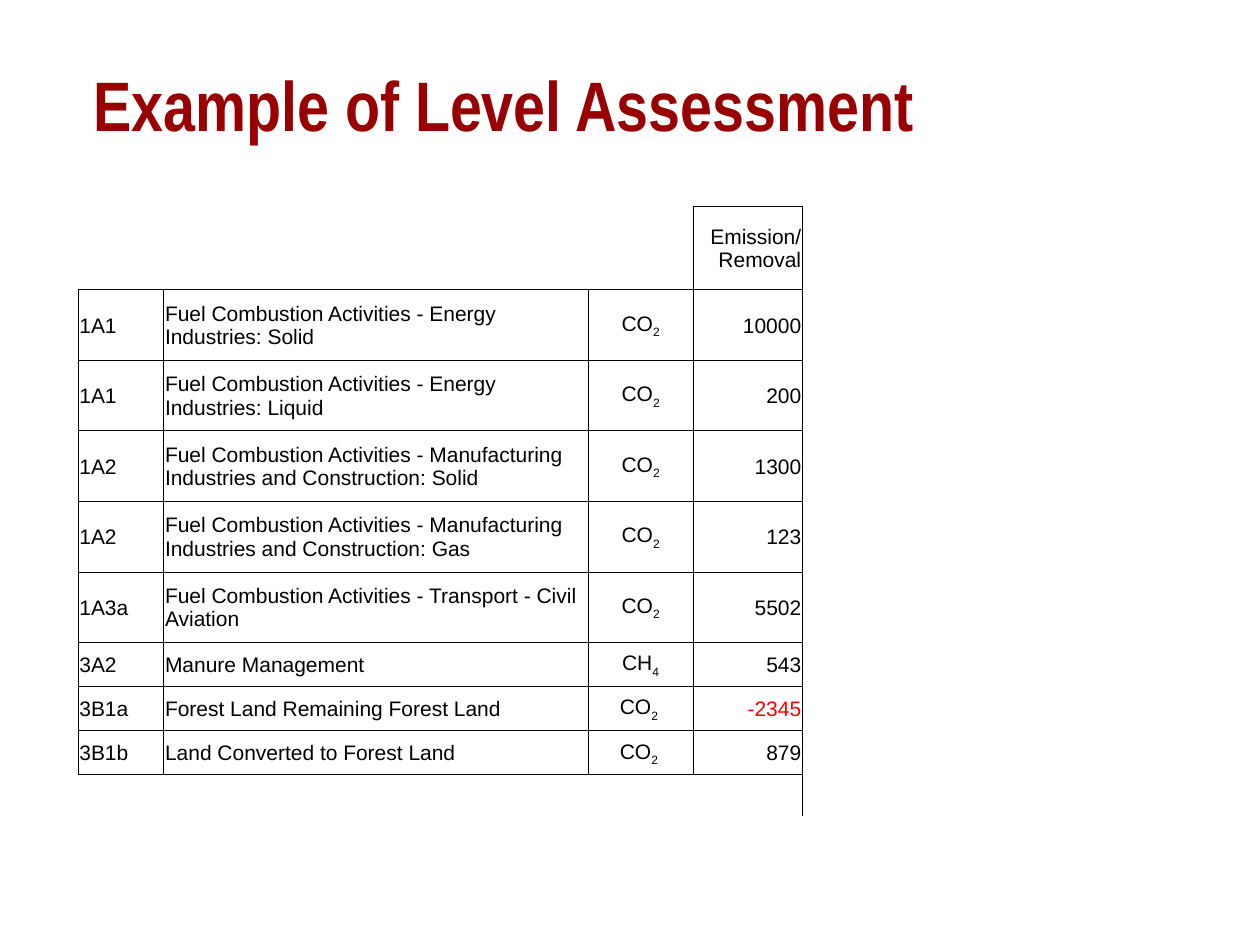
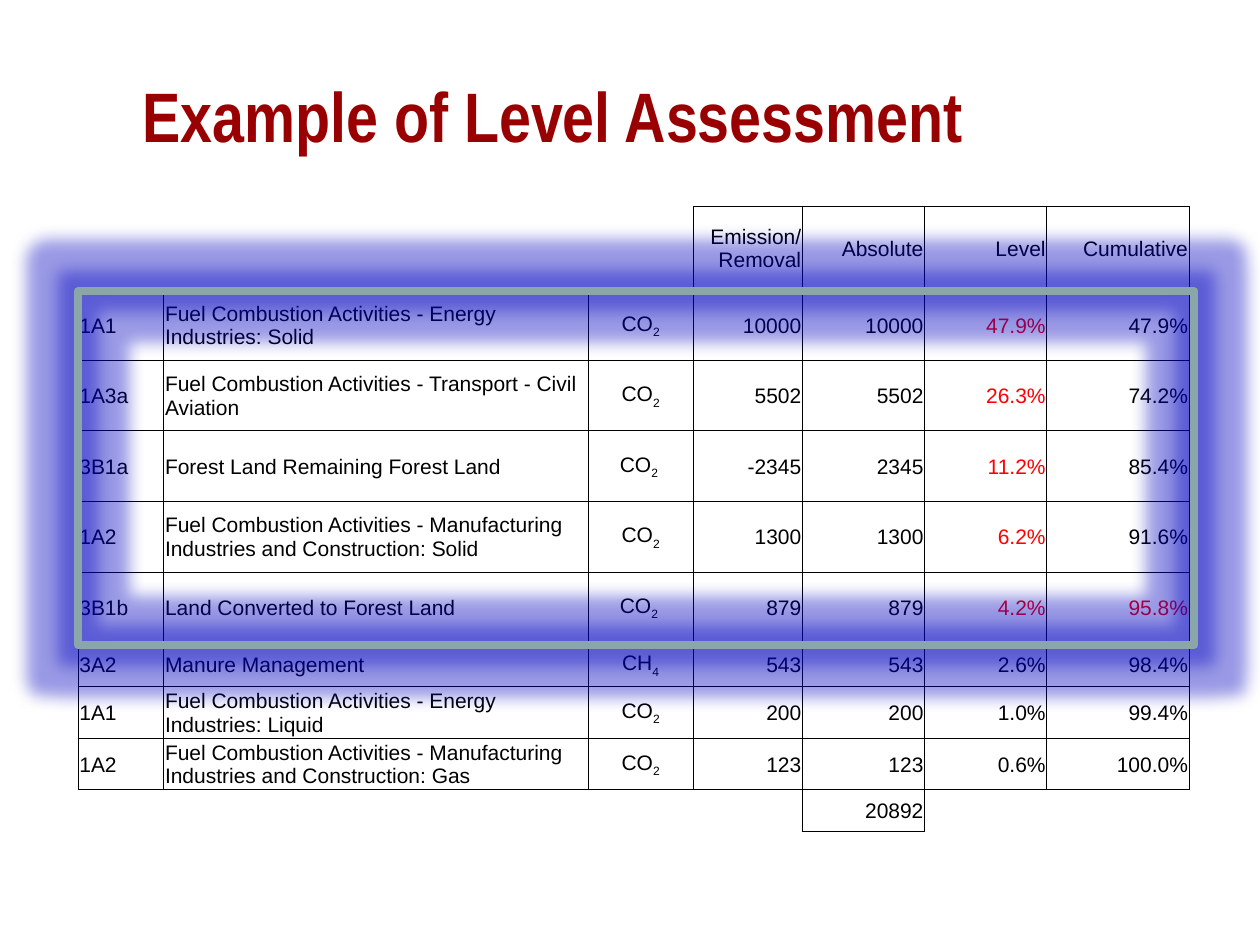
from itertools import accumulate

from lxml import etree
from pptx import Presentation
from pptx.dml.color import RGBColor
from pptx.enum.shapes import MSO_SHAPE
from pptx.enum.text import MSO_ANCHOR, MSO_AUTO_SIZE, PP_ALIGN
from pptx.oxml.ns import qn
from pptx.util import Inches, Pt

LEFT, CENTER, RIGHT = PP_ALIGN.LEFT, PP_ALIGN.CENTER, PP_ALIGN.RIGHT
MIDDLE = MSO_ANCHOR.MIDDLE
NO_AUTOFIT = MSO_AUTO_SIZE.NONE
RECTANGLE = MSO_SHAPE.RECTANGLE

# Colours and fonts
DARK_RED = RGBColor(0x99, 0x00, 0x02)
RED = RGBColor(0xFF, 0x00, 0x00)
BLACK = RGBColor(0x00, 0x00, 0x00)
FRAME_GREY = RGBColor(0x8A, 0xA6, 0xA8)
GLOW_BLUE = RGBColor(0x00, 0x00, 0xC0)
TITLE_FONT, TABLE_FONT = "Arial Narrow", "Arial"

# Table grid, in inches
TABLE_LEFT, TABLE_TOP = 0.62, 1.64
COLUMN_WIDTHS = [0.68, 3.37, 0.83, 0.87, 0.97, 0.97, 1.13]
COLUMN_ALIGNS = [LEFT, LEFT, CENTER] + [RIGHT] * 4
HEADER_HEIGHT, TALL_ROW, SHORT_ROW, WRAPPED_ROW, FOOTER_HEIGHT = 0.66, 0.56, 0.35, 0.41, 0.33
TALL_COUNT = 5
NO_STYLE = "{2D5ABB26-0587-4C30-8999-92F81FD0307C}"

# Content
TITLE = "Example of Level Assessment"
HEADINGS = ["", "", "", "Emission/ Removal", "Absolute", "Level", "Cumulative"]
KEY_THRESHOLD = 95
FUEL = "Fuel Combustion Activities - "
CO2, CO2_SPACED, CH4 = ("CO", "2"), ("CO", "2 "), ("CH", "4")
CATEGORIES = [
    ("1A1", FUEL + "Energy Industries: Solid", CO2, 10000),
    ("1A1", FUEL + "Energy Industries: Liquid", CO2, 200),
    ("1A2", FUEL + "Manufacturing Industries and Construction: Solid", CO2, 1300),
    ("1A2", FUEL + "Manufacturing Industries and Construction: Gas", CO2, 123),
    ("1A3a", FUEL + "Transport - Civil Aviation", CO2, 5502),
    ("3A2", "Manure Management", CH4, 543),
    ("3B1a", "Forest Land Remaining Forest Land", CO2_SPACED, -2345),
    ("3B1b", "Land Converted to Forest Land", CO2_SPACED, 879),
]


def write_text(frame, text, subscript="", font=TABLE_FONT, size=12, color=BLACK,
               bold=False, align=LEFT):
    """Fill the first paragraph, with an optional subscript at its end."""
    paragraph = frame.paragraphs[0]
    paragraph.alignment = align
    paragraph.font.size = Pt(size)
    for part, baseline in ((text, None), (subscript, "-25000")):
        if not part:
            continue
        run = paragraph.add_run()
        run.text = part
        run.font.name, run.font.size, run.font.bold = font, Pt(size), bold
        run.font.color.rgb = color
        if baseline:
            run.font._element.set("baseline", baseline)


def add_titled_slide(deck, left, top):
    slide = deck.slides.add_slide(deck.slide_layouts.get_by_name("Title Only"))
    title = slide.shapes.title
    title.left, title.top = Inches(left), Inches(top)
    title.width, title.height = Inches(8.66), Inches(1.1)
    title.text_frame.auto_size = NO_AUTOFIT
    title.text_frame.vertical_anchor = MIDDLE
    write_text(title.text_frame, TITLE, font=TITLE_FONT, size=40, color=DARK_RED, bold=True)
    return slide


def set_borders(cell, sides):
    """Draw thin lines on the given sides and none on the others."""
    properties = cell._tc.get_or_add_tcPr()
    for side in "LRTB":
        line = etree.SubElement(properties, qn(f"a:ln{side}"), w=str(Pt(0.5)))
        if side in sides:
            fill = etree.SubElement(line, qn("a:solidFill"))
            etree.SubElement(fill, qn("a:srgbClr"), val=str(BLACK))
        else:
            etree.SubElement(line, qn("a:noFill"))


def border_sides(rows, row, column):
    """A filled cell is boxed; an empty one shares its neighbours' lines."""
    if rows[row][column]:
        return "LRTB"
    neighbours = {"L": (row, column - 1), "R": (row, column + 1),
                  "T": (row - 1, column), "B": (row + 1, column)}
    return "".join(side for side, (r, c) in neighbours.items()
                   if 0 <= r < len(rows) and 0 <= c < len(rows[0]) and rows[r][c])


def add_level_table(slide, rows, heights, red_cells, extra_borders):
    widths = COLUMN_WIDTHS[:len(rows[0])]
    holder = slide.shapes.add_table(len(rows), len(widths), Inches(TABLE_LEFT), Inches(TABLE_TOP),
                                    Inches(sum(widths)), Inches(sum(heights)))
    table = holder.table
    table.first_row = table.horz_banding = False
    table._tbl.tblPr.find(qn("a:tableStyleId")).text = NO_STYLE
    for column, width in zip(table.columns, widths):
        column.width = Inches(width)
    for r, (values, height) in enumerate(zip(rows, heights)):
        table.rows[r].height = Inches(height)
        for c, value in enumerate(values):
            cell = table.cell(r, c)
            cell.margin_left = cell.margin_right = cell.margin_top = Inches(0.01)
            cell.margin_bottom = 0
            cell.vertical_anchor = MIDDLE
            set_borders(cell, border_sides(rows, r, c) + extra_borders.get((r, c), ""))
            cell.fill.background()
            text, subscript = value if isinstance(value, tuple) else (value, "")
            write_text(cell.text_frame, str(text), subscript, align=COLUMN_ALIGNS[c],
                       color=RED if (r, c) in red_cells else BLACK)


def add_glowing_frame(slide, row_count):
    """Mark the key categories, which follow the header row."""
    frame = slide.shapes.add_shape(RECTANGLE, Inches(TABLE_LEFT), Inches(TABLE_TOP + HEADER_HEIGHT + 0.01),
                                   Inches(sum(COLUMN_WIDTHS) + 0.04), Inches(row_count * TALL_ROW + 0.01))
    frame.shadow.inherit = False
    frame.fill.background()
    frame.line.color.rgb = FRAME_GREY
    frame.line.width = Pt(4.5)
    etree.SubElement(frame.line._get_or_add_ln(), qn("a:round"))
    effects = frame._element.spPr.find(qn("a:effectLst"))
    glow = etree.SubElement(effects, qn("a:glow"), rad=str(Pt(18)))
    color = etree.SubElement(glow, qn("a:srgbClr"), val=str(GLOW_BLUE))
    etree.SubElement(color, qn("a:alpha"), val="40000")


def add_emissions_slide(deck):
    slide = add_titled_slide(deck, 0.64, 0.27)
    rows = [HEADINGS[:4], *CATEGORIES, [""] * 4]
    heights = ([HEADER_HEIGHT] + [TALL_ROW] * TALL_COUNT
               + [SHORT_ROW] * (len(CATEGORIES) - TALL_COUNT) + [FOOTER_HEIGHT])
    removals = {(r, 3) for r, category in enumerate(CATEGORIES, 1) if category[3] < 0}
    add_level_table(slide, rows, heights, removals, {(len(rows) - 1, 3): "R"})


def add_ranking_slide(deck):
    slide = add_titled_slide(deck, 1.03, 0.36)
    ranked = sorted(CATEGORIES, key=lambda category: -abs(category[3]))
    total = sum(abs(category[3]) for category in ranked)
    levels = [round(100 * abs(category[3]) / total, 1) for category in ranked]
    cumulative = list(accumulate(levels))
    key_count = 1 + sum(share < KEY_THRESHOLD for share in cumulative)

    body = [(*category, abs(category[3]), f"{level:.1f}%", f"{share:.1f}%")
            for category, level, share in zip(ranked, levels, cumulative)]
    rows = [HEADINGS, *body, ["", "", "", "", total, "", ""]]
    heights = ([HEADER_HEIGHT] + [TALL_ROW] * TALL_COUNT
               + [SHORT_ROW, WRAPPED_ROW, WRAPPED_ROW, FOOTER_HEIGHT])
    key_levels = {(r, 5) for r in range(1, key_count + 1)}
    add_level_table(slide, rows, heights, key_levels | {(key_count, 6)}, {})
    add_glowing_frame(slide, key_count)


def main():
    deck = Presentation()
    deck.slide_width, deck.slide_height = Inches(10), Inches(7.5)
    add_emissions_slide(deck)
    add_ranking_slide(deck)
    deck.save("out.pptx")


if __name__ == "__main__":
    main()
